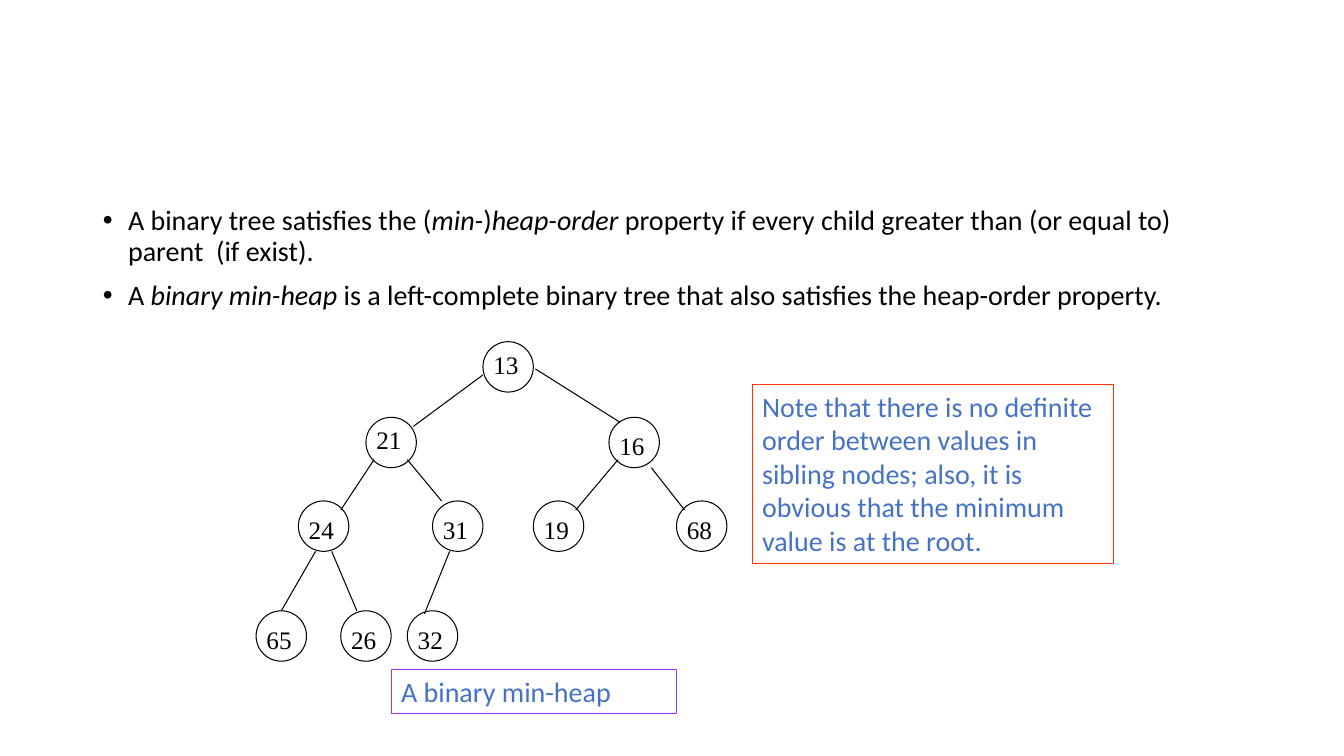
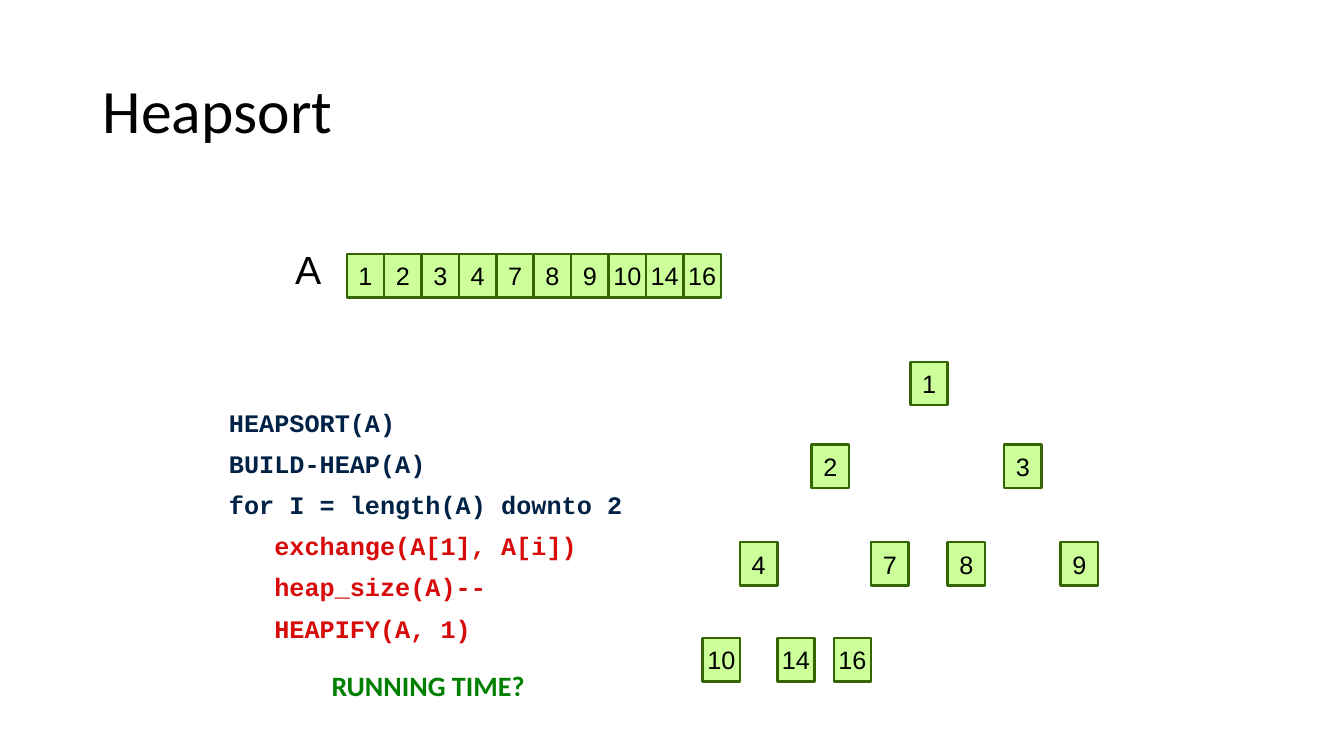
import pptx
import pptx.util
import pptx.dml.color
import pptx.enum.shapes
import pptx.enum.text
import pptx.oxml.ns
import lxml.etree

Inches = pptx.util.Inches
Pt = pptx.util.Pt
SHAPES = pptx.enum.shapes.MSO_SHAPE
ALIGN = pptx.enum.text.PP_ALIGN
ANCHOR = pptx.enum.text.MSO_ANCHOR
NO_FIT = pptx.enum.text.MSO_AUTO_SIZE.NONE

COLORS = {
    "black": "000000",
    "note": "4472C4",
    "note_border": "FF3300",
    "caption_border": "9933FF",
    "cell": "CCFF99",
    "cell_border": "336600",
    "code": "002246",
    "loop_body": "D60B0A",
    "question": "008000",
}
TITLE_BOX = (0.92, 0.4, 11.5, 1.45)
NODE_SIZE = 0.5
CELL_WIDTH, CELL_HEIGHT = 0.37, 0.43
HANGING = 0.25

BULLETS = [
    [("A binary tree satisfies the (", False), ("min-", True), (")", False),
     ("heap-order ", True),
     ("property if every child greater than (or equal to) parent  (if exist).", False)],
    [("A ", False), ("binary min-heap", True),
     (" is a left-complete binary tree that also satisfies the heap-order property.", False)],
]
# Each tree level: top, then (value, left) pairs, all relative to the tree's box.
MIN_HEAP_LEVELS = [
    (0, [(13, 2.25)]),
    (0.75, [(21, 1.09), (16, 3.5)]),
    (1.58, [(24, 0.42), (31, 1.75), (19, 2.75), (68, 4.17)]),
    (2.67, [(65, 0), (26, 0.84), (32, 1.5)]),
]
HIGH_LABELS = (13, 21)
MIN_HEAP_EDGES = [
    (2.25, 0.33, 1.56, 0.84), (2.77, 0.27, 3.61, 0.8),
    (1.17, 1.17, 0.84, 1.67), (1.5, 1.17, 1.84, 1.58),
    (3.59, 1.17, 3.17, 1.67), (3.92, 1.25, 4.25, 1.67),
    (0.59, 2.08, 0.25, 2.67), (0.75, 2.08, 1, 2.67),
    (1.92, 2.08, 1.67, 2.7),
]
SORTED_LEVELS = [
    (0, [(1, 2.06)]),
    (0.82, [(2, 1.08), (3, 2.99)]),
    (1.79, [(4, 0.37), (7, 1.67), (8, 2.43), (9, 3.55)]),
    (2.74, [(10, 0), (14, 0.74), (16, 1.3)]),
]
SORTED_VALUES = [value for _, row in SORTED_LEVELS for value, _ in row]
CODE_LINES = ["HEAPSORT(A)", "BUILD-HEAP(A)", "for I = length(A) downto 2"]
LOOP_LINES = ["exchange(A[1], A[i])", "heap_size(A)--", "HEAPIFY(A, 1)"]


def rgb(name):
    return pptx.dml.color.RGBColor.from_string(COLORS[name])


def format_paragraph(paragraph, size, font, color="black", bold=False):
    for run in paragraph.runs:
        run.font.size = Pt(size)
        run.font.name = font
        run.font.bold = bold
        run.font.color.rgb = rgb(color)


def format_list_item(paragraph, left, first_line, bullet):
    properties = paragraph._p.get_or_add_pPr()
    properties.set("marL", str(Inches(left)))
    properties.set("indent", str(Inches(first_line)))
    paragraph.line_spacing = 0.9
    paragraph.space_before = Pt(10)
    mark = lxml.etree.SubElement(
        properties, pptx.oxml.ns.qn("a:buChar" if bullet else "a:buNone"))
    if bullet:
        mark.set("char", "•")


def place(shape, box):
    shape.left, shape.top, shape.width, shape.height = map(Inches, box)


def add_label(slide, box, text, size, font, color="black", bold=False):
    shape = slide.shapes.add_textbox(*map(Inches, box))
    shape.text_frame.word_wrap = False
    shape.text_frame.text = text
    format_paragraph(shape.text_frame.paragraphs[0], size, font, color, bold)


def add_text_shape(slide, kind, box, text, text_style, line, fill=None):
    """Add an outlined shape with left-aligned text at its top."""
    shape = slide.shapes.add_shape(kind, *map(Inches, box))
    shape.shadow.inherit = False
    if fill:
        shape.fill.solid()
        shape.fill.fore_color.rgb = rgb(fill)
    else:
        shape.fill.background()
    color, width = line
    shape.line.color.rgb = rgb(color)
    shape.line.width = Pt(width)
    frame = shape.text_frame
    frame.word_wrap = True
    frame.vertical_anchor = ANCHOR.TOP
    frame.text = text
    frame.paragraphs[0].alignment = ALIGN.LEFT
    format_paragraph(frame.paragraphs[0], *text_style)
    return shape


def add_node(slide, left, top, value):
    shape = add_text_shape(
        slide, SHAPES.OVAL, (left, top, NODE_SIZE, NODE_SIZE), str(value),
        (18, "Times New Roman"), ("black", 0.75))
    frame = shape.text_frame
    frame.word_wrap = False
    frame.margin_left = Inches(0.03)
    frame.margin_top = Inches(0 if value in HIGH_LABELS else 0.06)
    frame.margin_right = frame.margin_bottom = 0


def add_cell(slide, left, top, value):
    shape = add_text_shape(
        slide, SHAPES.RECTANGLE, (left, top, CELL_WIDTH, CELL_HEIGHT), str(value),
        (18, "Arial"), ("cell_border", 1.75), "cell")
    frame = shape.text_frame
    frame.word_wrap = False
    frame.vertical_anchor = ANCHOR.MIDDLE
    frame.paragraphs[0].alignment = ALIGN.CENTER


def add_edge(slide, x1, y1, x2, y2):
    connector = slide.shapes.add_connector(
        pptx.enum.shapes.MSO_CONNECTOR.STRAIGHT, *map(Inches, (x1, y1, x2, y2)))
    connector.line.color.rgb = rgb("black")
    connector.line.width = Pt(0.75)
    lxml.etree.SubElement(
        connector._element.spPr, pptx.oxml.ns.qn("a:effectLst"))


def add_tree(slide, left, top, levels, add_item, edges=()):
    for level_top, row in levels:
        for value, item_left in row:
            add_item(slide, left + item_left, top + level_top, value)
    for x1, y1, x2, y2 in edges:
        add_edge(slide, left + x1, top + y1, left + x2, top + y2)


def add_array(slide, left, top, width, values):
    pitch = width / len(values)
    for index, value in enumerate(values):
        add_cell(slide, left + index * pitch, top, value)


def fill_title(slide, text):
    title = slide.shapes.title
    place(title, TITLE_BOX)
    frame = title.text_frame
    frame.text = text
    frame.auto_size = NO_FIT
    frame.vertical_anchor = ANCHOR.MIDDLE
    paragraph = frame.paragraphs[0]
    paragraph.alignment = ALIGN.LEFT
    paragraph.line_spacing = 0.9
    format_paragraph(paragraph, 44, "Calibri")


def fill_body(slide, box, lines):
    """Put the lines in the body placeholder and return its paragraphs."""
    body = slide.placeholders[1]
    place(body, box)
    body.text_frame.text = "\n".join(lines)
    body.text_frame.auto_size = NO_FIT
    return body.text_frame.paragraphs


def fill_bullets(slide, box):
    for paragraph, parts in zip(fill_body(slide, box, [""] * len(BULLETS)), BULLETS):
        for text, italic in parts:
            run = paragraph.add_run()
            run.text = text
            run.font.italic = italic
        format_paragraph(paragraph, 20, "Calibri")
        format_list_item(paragraph, HANGING, -HANGING, True)


def fill_code(slide, box):
    paragraphs = fill_body(slide, box, CODE_LINES + LOOP_LINES)
    for index, paragraph in enumerate(paragraphs):
        in_loop = index >= len(CODE_LINES)
        color = "loop_body" if in_loop else "code"
        format_paragraph(paragraph, 18, "Courier New", color, True)
        if in_loop:
            format_list_item(paragraph, 0.45, 0, False)
        else:
            format_list_item(paragraph, HANGING, -HANGING, False)


def build_min_heap_slide(slide):
    title = slide.shapes.title._element
    title.getparent().remove(title)
    fill_bullets(slide, (0.92, 2, 11.5, 4.76))
    add_tree(slide, 2.54, 3.39, MIN_HEAP_LEVELS, add_node, MIN_HEAP_EDGES)
    note_style = (20, "Calibri", "note")
    add_text_shape(
        slide, SHAPES.RECTANGLE, (7.46, 3.81, 3.58, 1.78),
        "Note that there is no definite order between values in sibling nodes; "
        "also, it is obvious that the minimum value is at the root.",
        note_style, ("note_border", 0.75))
    add_text_shape(
        slide, SHAPES.RECTANGLE, (3.88, 6.64, 2.83, 0.44), "A binary min-heap",
        note_style, ("caption_border", 0.75))


def build_heapsort_slide(slide):
    fill_title(slide, "Heapsort")
    add_label(slide, (2.83, 2.38, 0.46, 0.57), "A", 28, "Arial")
    add_array(slide, 3.44, 2.52, 3.71, SORTED_VALUES)
    fill_code(slide, (2.17, 4.02, 4.99, 3.23))
    add_tree(slide, 6.97, 3.59, SORTED_LEVELS, add_cell)
    add_label(slide, (3.19, 6.58, 2.14, 0.44), "RUNNING TIME?", 20, "Calibri",
              "question", True)


def main():
    presentation = pptx.Presentation()
    presentation.slide_width = Inches(13.33)
    presentation.slide_height = Inches(7.5)
    layout = presentation.slide_layouts.get_by_name("Title and Content")
    for build in (build_min_heap_slide, build_heapsort_slide):
        build(presentation.slides.add_slide(layout))
    presentation.save("out.pptx")


if __name__ == "__main__":
    main()
